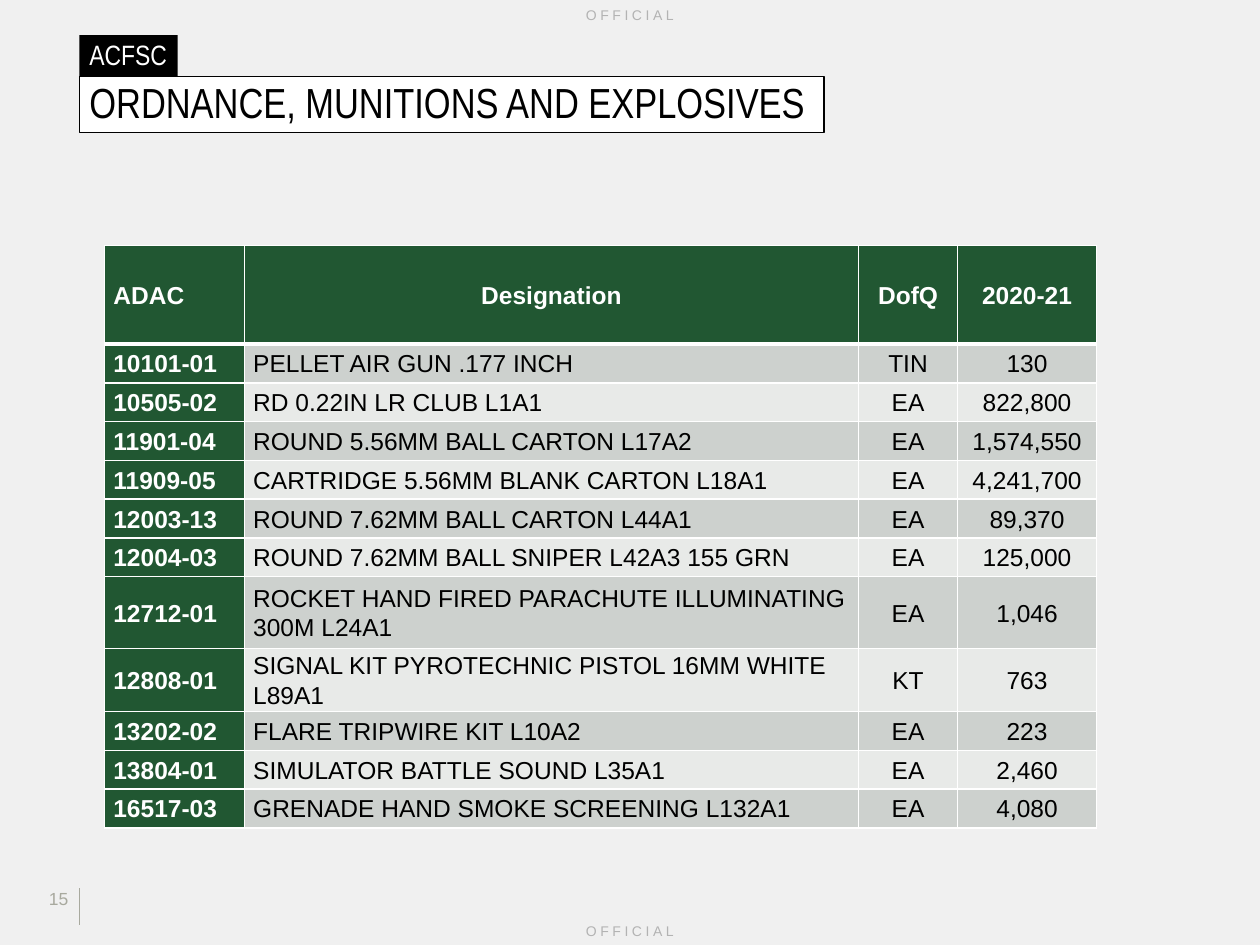
from lxml import etree
from pptx import Presentation
from pptx.dml.color import RGBColor
from pptx.enum.shapes import MSO_CONNECTOR, MSO_SHAPE
from pptx.enum.text import MSO_ANCHOR, PP_ALIGN
from pptx.oxml.ns import qn
from pptx.util import Inches, Pt

LEFT, CENTER, RIGHT = PP_ALIGN.LEFT, PP_ALIGN.CENTER, PP_ALIGN.RIGHT
TOP, MIDDLE, BOTTOM = MSO_ANCHOR.TOP, MSO_ANCHOR.MIDDLE, MSO_ANCHOR.BOTTOM
RECTANGLE, STRAIGHT = MSO_SHAPE.RECTANGLE, MSO_CONNECTOR.STRAIGHT

COLORS = {
    "background": "F0F0F0", "black": "000000", "white": "FFFFFF",
    "green": "215732", "dark band": "CDD1CE", "light band": "E8EAE8",
    "marking": "B3B3B3", "footer": "A8A99E",
}
GRID_COLUMNS, GRID_ROWS = 100, 75  # square units of a tenth of an inch

HEADINGS = ("ADAC", "Designation", "DofQ", "2020-21")
ITEMS = [
    ("10101-01", "PELLET AIR GUN .177 INCH", "TIN", "130"),
    ("10505-02", "RD 0.22IN LR CLUB L1A1", "EA", "822,800"),
    ("11901-04", "ROUND 5.56MM BALL CARTON L17A2", "EA", "1,574,550"),
    ("11909-05", "CARTRIDGE 5.56MM BLANK CARTON L18A1", "EA", "4,241,700"),
    ("12003-13", "ROUND 7.62MM BALL CARTON L44A1", "EA", "89,370"),
    ("12004-03", "ROUND 7.62MM BALL SNIPER L42A3 155 GRN", "EA", "125,000"),
    ("12712-01", "ROCKET HAND FIRED PARACHUTE ILLUMINATING 300M L24A1", "EA", "1,046"),
    ("12808-01", "SIGNAL KIT PYROTECHNIC PISTOL 16MM WHITE L89A1", "KT", "763"),
    ("13202-02", "FLARE TRIPWIRE KIT L10A2", "EA", "223"),
    ("13804-01", "SIMULATOR BATTLE SOUND L35A1", "EA", "2,460"),
    ("16517-03", "GRENADE HAND SMOKE SCREENING L132A1", "EA", "4,080"),
]
COLUMN_WIDTHS = (11.1, 48.75, 7.85, 11.05)
HEADER_HEIGHT, ITEM_HEIGHT = 7.8, 3.08
TALL_ROWS = {"12712-01": 5.7, "12808-01": 5}


def color(name):
    return RGBColor.from_string(COLORS[name])


def write_text(frame, text, size, ink, font="Arial", bold=False, align=LEFT,
               line_spacing=None, tracking=0):
    """Fill the first paragraph; tracking is the letter spacing in points."""
    paragraph = frame.paragraphs[0]
    paragraph.alignment = align
    if line_spacing:
        paragraph.line_spacing = line_spacing
    run = paragraph.add_run()
    run.text = text
    run.font.size = Pt(size)
    run.font.name = font
    run.font.bold = bold
    run.font.color.rgb = color(ink)
    if tracking:
        run.font._element.set("spc", str(tracking * 100))


def set_borders(cell, top, bottom):
    """Draw white borders; top and bottom are widths in points."""
    properties = cell._tc.get_or_add_tcPr()
    widths = {"a:lnL": 1, "a:lnR": 1, "a:lnT": top, "a:lnB": bottom}
    for position, (tag, width) in enumerate(widths.items()):
        border = etree.Element(qn(tag), w=str(Pt(width)))
        fill = etree.SubElement(border, qn("a:solidFill"))
        etree.SubElement(fill, qn("a:srgbClr"), val=COLORS["white"])
        properties.insert(position, border)


class SlideBuilder:
    def __init__(self, presentation):
        self.slide = presentation.slides.add_slide(presentation.slide_layouts[6])
        self.column = presentation.slide_width / GRID_COLUMNS
        self.row = presentation.slide_height / GRID_ROWS
        background = self.slide.background.fill
        background.solid()
        background.fore_color.rgb = color("background")

    def place(self, left, top, width, height):
        return (round(left * self.column), round(top * self.row),
                round(width * self.column), round(height * self.row))

    def text(self, area, text, **style):
        frame = self.slide.shapes.add_textbox(*self.place(*area)).text_frame
        frame.word_wrap = True
        write_text(frame, text, **style)

    def label(self, area, text, fill, line=None, anchor=MIDDLE, wrap=True,
              inset=0.04, **style):
        shape = self.slide.shapes.add_shape(RECTANGLE, *self.place(*area))
        shape.shadow.inherit = False
        shape.fill.solid()
        shape.fill.fore_color.rgb = color(fill)
        if line:
            shape.line.color.rgb = color(line)
            shape.line.width = Pt(0.75)
        else:
            shape.line.fill.background()
        frame = shape.text_frame
        frame.word_wrap = wrap
        frame.vertical_anchor = anchor
        frame.margin_left = frame.margin_right = Inches(0.08)
        frame.margin_top = frame.margin_bottom = Inches(inset)
        write_text(frame, text, font="Arial Narrow", line_spacing=0.9, **style)

    def vertical_line(self, left, top, height, ink):
        x, y, _, length = self.place(left, top, 0, height)
        line = self.slide.shapes.add_connector(STRAIGHT, x, y, x, y + length)
        line.line.color.rgb = color(ink)
        line.line.width = Pt(1)
        etree.SubElement(line._element.spPr, qn("a:effectLst"))

    def table(self, left, top, widths, heights, rows):
        area = self.place(left, top, sum(widths), sum(heights))
        table = self.slide.shapes.add_table(len(rows), len(widths), *area).table
        for column, width in zip(table.columns, widths):
            column.width = round(width * self.column)
        for row, height in zip(table.rows, heights):
            row.height = round(height * self.row)
        for row_index, values in enumerate(rows):
            for column_index, value in enumerate(values):
                self.cell(table, row_index, column_index, value)

    def cell(self, table, row, column, value):
        cell = table.cell(row, column)
        heading = row == 0 or column == 0
        band = "dark band" if row % 2 else "light band"
        cell.fill.solid()
        cell.fill.fore_color.rgb = color("green" if heading else band)
        cell.vertical_anchor = MIDDLE
        cell.margin_left = cell.margin_right = Inches(0.07)
        cell.margin_top = cell.margin_bottom = 0
        centered = column > 1 or (row == 0 and column == 1)
        write_text(cell.text_frame, value, size=14, bold=heading,
                   ink="white" if heading else "black",
                   align=CENTER if centered else LEFT, line_spacing=1.07)
        set_borders(cell, top=3 if row == 1 else 1, bottom=3 if row == 0 else 1)


def main():
    presentation = Presentation()
    presentation.slide_width, presentation.slide_height = Inches(10), Inches(7.5)
    builder = SlideBuilder(presentation)

    for top in (72.7, 0):
        builder.text((38.1, top, 23.8, 2.4), "OFFICIAL", size=8, ink="marking",
                     align=CENTER, tracking=2)
    builder.vertical_line(6.3, 70.5, 2.9, "footer")

    heights = [HEADER_HEIGHT]
    heights += [TALL_ROWS.get(item[0], ITEM_HEIGHT) for item in ITEMS]
    builder.table(8.3, 19.5, COLUMN_WIDTHS, heights, [HEADINGS] + ITEMS)

    builder.label((6.3, 2.8, 7.8, 3.4), "ACFSC", fill="black", anchor=BOTTOM,
                  wrap=False, inset=0.05, size=16, ink="white")
    builder.label((6.3, 6.1, 59.1, 4.4), "ORDNANCE, MUNITIONS AND EXPLOSIVES",
                  fill="white", line="black", size=24, ink="black")
    builder.text((2.4, 70, 4, 3.5), "15", size=10, ink="footer", align=RIGHT)

    presentation.save("out.pptx")


if __name__ == "__main__":
    main()
